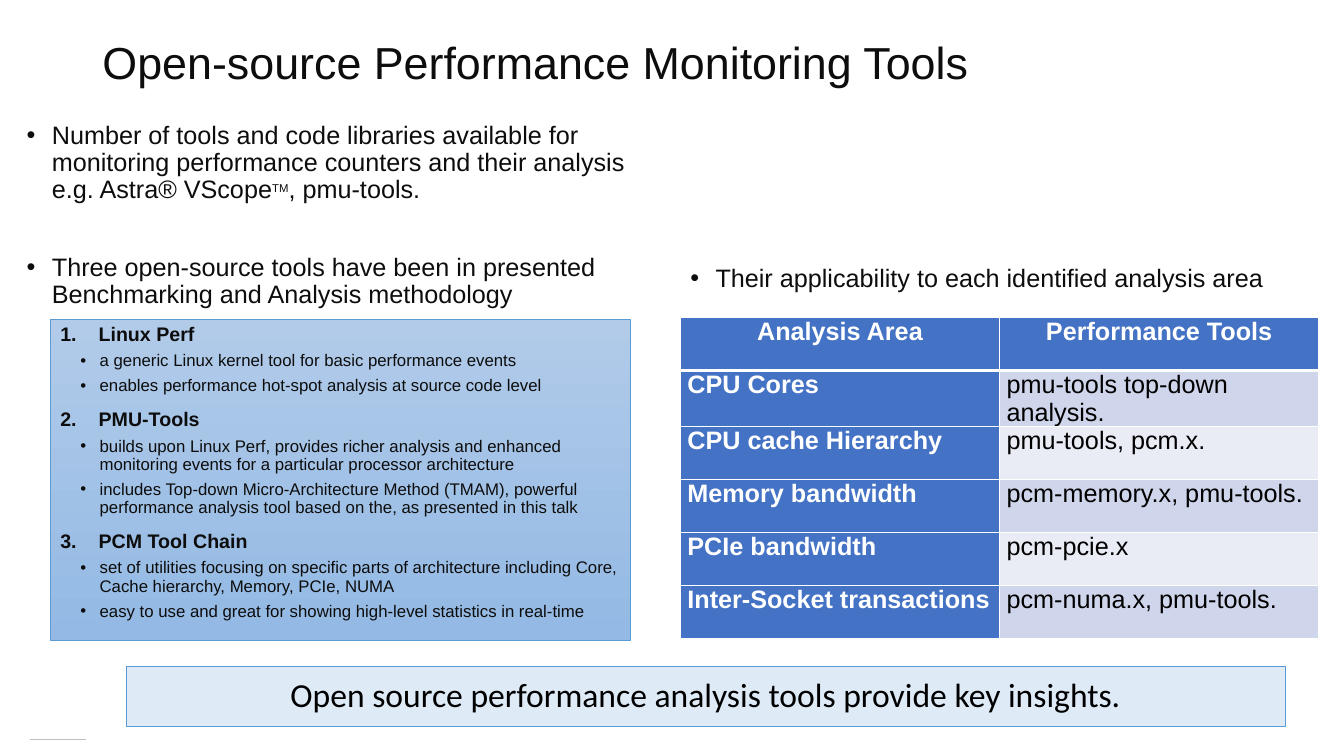
from lxml.etree import SubElement
from pptx import Presentation
from pptx.dml.color import RGBColor
from pptx.enum.shapes import MSO_CONNECTOR, MSO_SHAPE
from pptx.enum.text import MSO_ANCHOR, MSO_AUTO_SIZE, PP_ALIGN
from pptx.oxml.ns import qn
from pptx.util import Inches, Pt

COLORS = {
    "text": "0D0D0D", "black": "000000", "white": "FFFFFF", "rule": "BFBFBF",
    "header": "4472C4", "band_dark": "CFD5EA", "band_light": "E9EBF5",
    "outline": "5B9BD5", "panel_top": "B1CBE9", "panel_bottom": "93B9E4",
    "banner": "DEEBF7",
}
UNIT = Inches(1) / 12


def grid(*counts):
    return [round(count * UNIT) for count in counts]


def write(paragraph, runs, indent=0, hanging=0, bullet=None, before=0,
          font="Arial", color="text", bold=False, spacing=0.9):
    properties = paragraph._p.get_or_add_pPr()
    if bullet == "number":
        SubElement(properties, qn("a:buFont"), typeface="+mj-lt")
        SubElement(properties, qn("a:buAutoNum"), type="arabicPeriod")
    elif bullet:
        SubElement(properties, qn("a:buFont"), typeface="Arial")
        SubElement(properties, qn("a:buChar"), char=bullet)
    if bullet:
        properties.set("marL", str(Inches(indent)))
        properties.set("indent", str(-Inches(hanging)))
    paragraph.line_spacing = spacing
    paragraph.space_before = Pt(before)
    for text, size in runs:
        run = paragraph.add_run()
        run.text = text
        run.font.name = font
        run.font.size = Pt(size)
        run.font.bold = bold
        run.font.color.rgb = RGBColor.from_string(COLORS[color])
        if text == "TM":
            run._r.get_or_add_rPr().set("baseline", "30000")


presentation = Presentation()
presentation.slide_width, presentation.slide_height = grid(160, 90)
slide = presentation.slides.add_slide(presentation.slide_layouts[5])

title = slide.shapes.title
title.left, title.top, title.width, title.height = grid(11, -1, 124.2, 17.4)
title.text_frame.auto_size = MSO_AUTO_SIZE.NONE
title.text_frame.vertical_anchor = MSO_ANCHOR.MIDDLE
title_paragraph = title.text_frame.paragraphs[0]
title_paragraph.alignment = PP_ALIGN.LEFT
write(title_paragraph, [("Open-source Performance Monitoring Tools", 32)])

rule = slide.shapes.add_connector(MSO_CONNECTOR.STRAIGHT, *grid(3.6, 88, 10.2, 88))
rule.line.color.rgb = RGBColor.from_string(COLORS["rule"])
rule.line.width = Pt(0.5)
SubElement(rule._element.spPr, qn("a:effectLst"))

tool_areas = [
    ("Analysis Area", "Performance Tools"),
    ("CPU Cores", "pmu-tools top-down analysis."),
    ("CPU cache Hierarchy", "pmu-tools, pcm.x."),
    ("Memory bandwidth", "pcm-memory.x, pmu-tools."),
    ("PCIe bandwidth", "pcm-pcie.x"),
    ("Inter-Socket transactions", "pcm-numa.x, pmu-tools."),
]
table = slide.shapes.add_table(len(tool_areas), 2, *grid(81, 37.8, 76, 37.8)).table
for row_index, row_texts in enumerate(tool_areas):
    for column_index, text in enumerate(row_texts):
        cell = table.cell(row_index, column_index)
        is_header = row_index == 0
        is_heading = is_header or column_index == 0
        cell.margin_left = cell.margin_right = Inches(0.07)
        cell.margin_top = cell.margin_bottom = 0
        cell_properties = cell._tc.get_or_add_tcPr()
        for side in ("lnL", "lnR", "lnT", "lnB"):
            thick = (is_header and side == "lnB") or (row_index == 1 and side == "lnT")
            border = SubElement(cell_properties, qn(f"a:{side}"), w=str(Pt(3 if thick else 1)))
            border_fill = SubElement(border, qn("a:solidFill"))
            SubElement(border_fill, qn("a:srgbClr"), val=COLORS["white"])
        band = "band_dark" if row_index % 2 else "band_light"
        cell.fill.solid()
        cell.fill.fore_color.rgb = RGBColor.from_string(COLORS["header" if is_heading else band])
        paragraph = cell.text_frame.paragraphs[0]
        paragraph.alignment = PP_ALIGN.CENTER if is_header else PP_ALIGN.LEFT
        write(paragraph, [(text, 18)], color="white" if is_heading else "black",
              bold=is_heading, spacing=1.0)

bullet_boxes = [
    ((2, 14, 74, 43), [
        [("Number of tools and code libraries available for monitoring performance "
          "counters and their analysis e.g. Astra® VScope", 18),
         ("TM", 14), (", pmu-tools.", 18)],
        [("Three open-source tools have been in presented Benchmarking and "
          "Analysis methodology", 18)],
    ]),
    ((81, 31, 81, 37), [
        [("Their applicability to each identified analysis area", 18)],
    ]),
]
for place, bullets in bullet_boxes:
    frame = slide.shapes.add_textbox(*grid(*place)).text_frame
    frame.word_wrap = True
    for index, runs in enumerate(bullets):
        paragraph = frame.add_paragraph() if index else frame.paragraphs[0]
        write(paragraph, runs, 0.25, 0.25, "•", 36 if index else 0)

panel = slide.shapes.add_shape(MSO_SHAPE.RECTANGLE, *grid(6, 38, 69, 38.25))
panel.fill.gradient()
panel.fill.gradient_angle = 270
for stop, name in zip(panel.fill.gradient_stops, ("panel_top", "panel_bottom")):
    stop.color.rgb = RGBColor.from_string(COLORS[name])
panel.text_frame.vertical_anchor = MSO_ANCHOR.TOP

banner = slide.shapes.add_shape(MSO_SHAPE.RECTANGLE, *grid(15, 79.3, 138, 7.2))
banner.fill.solid()
banner.fill.fore_color.rgb = RGBColor.from_string(COLORS["banner"])
banner.text_frame.vertical_anchor = MSO_ANCHOR.MIDDLE

for shape in (panel, banner):
    shape.shadow.inherit = False
    shape.line.color.rgb = RGBColor.from_string(COLORS["outline"])
    shape.line.width = Pt(0.5)
    shape.text_frame.word_wrap = True

tools = [
    ("Linux Perf", [
        "a generic Linux kernel tool for basic performance events",
        "enables performance hot-spot analysis at source code level",
    ]),
    ("PMU-Tools", [
        "builds upon Linux Perf, provides richer analysis and enhanced monitoring "
        "events for a particular processor architecture",
        "includes Top-down Micro-Architecture Method (TMAM), powerful performance "
        "analysis tool based on the, as presented in this talk",
    ]),
    ("PCM Tool Chain", [
        "set of utilities focusing on specific parts of architecture including Core, "
        "Cache hierarchy, Memory, PCIe, NUMA",
        "easy to use and great for showing high-level statistics in real-time",
    ]),
]
for index, (tool, features) in enumerate(tools):
    frame = panel.text_frame
    paragraph = frame.add_paragraph() if index else frame.paragraphs[0]
    paragraph.alignment = PP_ALIGN.LEFT
    write(paragraph, [(tool, 14)], 0.38, 0.38, "number", 10 if index else 0, bold=True)
    for feature in features:
        paragraph = frame.add_paragraph()
        paragraph.level = 1
        paragraph.alignment = PP_ALIGN.LEFT
        write(paragraph, [(feature, 12)], 0.39, 0.19, "•", 5)

banner_paragraph = banner.text_frame.paragraphs[0]
banner_paragraph.alignment = PP_ALIGN.CENTER
write(banner_paragraph, [("Open source performance analysis tools provide key insights.", 24)],
      font="Calibri", color="black")

presentation.save("out.pptx")
